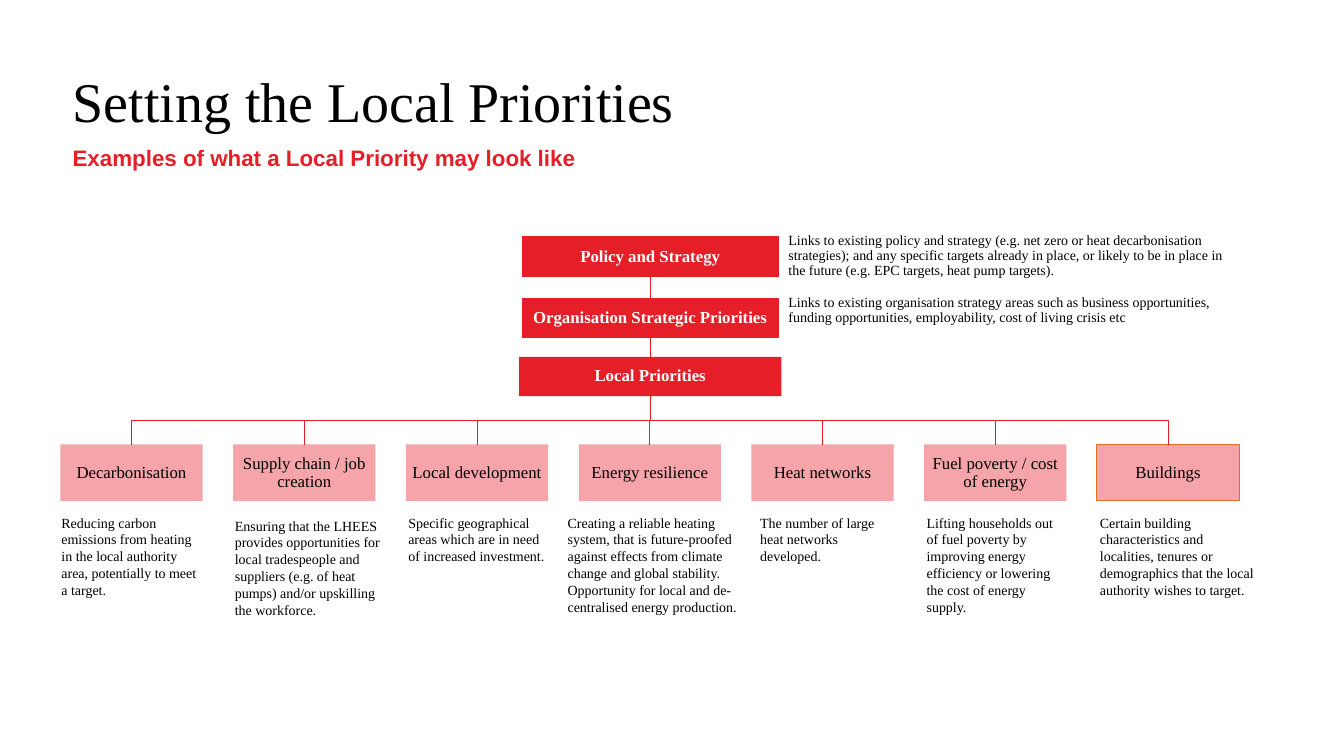
from pptx import Presentation
from pptx.dml.color import RGBColor
from pptx.enum.shapes import MSO_CONNECTOR as LINK, MSO_SHAPE
from pptx.enum.text import MSO_ANCHOR, PP_ALIGN
from pptx.oxml.ns import qn
from pptx.util import Inches, Pt
from lxml.etree import SubElement

COLOURS = {"red": "E61E28", "pink": "F5A5A9", "orange": "E66E23",
           "black": "000000", "white": "FFFFFF"}
SERIF, SANS = "Times New Roman", "Arial"

# Chart geometry, in inches
CENTRE = 6.45
LEVEL_HEIGHT = 0.39
TRUNK_END = 3.93
PRIORITY_LEFT, PRIORITY_TOP = 0.6, 4.41
PRIORITY_WIDTH, PRIORITY_HEIGHT = 1.41, 0.56
PRIORITY_PITCH = 10.28 / 6

# Level: label, top, width, outline
LEVELS = [
    ("Policy and Strategy", 2.35, 2.54, "red"),
    ("Organisation Strategic Priorities", 2.96, 2.54, "red"),
    ("Local Priorities", 3.54, 2.6, None),
]

# Note beside a level: top, text
LEVEL_NOTES = [
    (2.12, "Links to existing policy and strategy (e.g. net zero or heat "
           "decarbonisation strategies); and any specific targets already in place, "
           "or likely to be in place in the future (e.g. EPC targets, heat pump targets)."),
    (2.78, "Links to existing organisation strategy areas such as business "
           "opportunities, funding opportunities, employability, cost of living crisis etc"),
]

# Priority: label, outline, note left, note top, note width, note
PRIORITIES = [
    ("Decarbonisation", None, 0.41, 4.9, 1.76,
     "Reducing carbon emissions from heating in the local authority area, "
     "potentially to meet a target."),
    ("Supply chain / job creation", None, 2.13, 4.93, 1.93,
     "Ensuring that the LHEES provides opportunities for local tradespeople and "
     "suppliers (e.g. of heat pumps) and/or upskilling the workforce."),
    ("Local development", None, 3.85, 4.9, 1.78,
     "Specific geographical areas which are in need of increased investment."),
    ("Energy resilience", None, 5.43, 4.9, 2.19,
     "Creating a reliable heating system, that is future-proofed against effects "
     "from climate change and global stability. Opportunity for local and "
     "de-centralised energy production."),
    ("Heat networks", None, 7.34, 4.9, 1.78,
     "The number of large heat networks developed."),
    ("Fuel poverty / cost of energy", None, 8.99, 4.9, 1.78,
     "Lifting households out of fuel poverty by improving energy efficiency or "
     "lowering the cost of energy supply."),
    ("Buildings", "orange", 10.71, 4.9, 1.97,
     "Certain building characteristics and localities, tenures or demographics "
     "that the local authority wishes to target."),
]


def colour(name):
    return RGBColor.from_string(COLOURS[name])


def write(shape, text, inset, ink="black", font=None, paragraph=None, anchor=MSO_ANCHOR.TOP):
    frame = shape.text_frame
    margins = {f"margin_{side}": Inches(inset) for side in ("left", "top", "right", "bottom")}
    line = frame.paragraphs[0]
    line.text = text
    for target, values in (
        (frame, {"word_wrap": True, "vertical_anchor": anchor, **margins}),
        (line, paragraph or {}),
        (line.font, {"name": SERIF, **(font or {})}),
    ):
        for attribute, value in values.items():
            setattr(target, attribute, value)
    line.font.color.rgb = colour(ink)


def add_text(slide, bounds, text, inset=0, **style):
    write(slide.shapes.add_textbox(*map(Inches, bounds)), text, inset, **style)


def add_note(slide, bounds, text, **paragraph):
    add_text(slide, bounds, text, 0.2, font={"size": Pt(10)}, paragraph=paragraph)


def add_box(slide, bounds, text, fill, outline, ink, bold=False):
    box = slide.shapes.add_shape(MSO_SHAPE.RECTANGLE, *map(Inches, bounds))
    box.shadow.inherit = False
    box.fill.solid()
    box.fill.fore_color.rgb = colour(fill)
    if outline:
        box.line.color.rgb = colour(outline)
        box.line.width = Pt(0.75)
    else:
        box.line.fill.background()
    write(box, text, 0.05, ink, {"size": Pt(12), "bold": bold},
          {"alignment": PP_ALIGN.CENTER, "line_spacing": 0.9}, MSO_ANCHOR.MIDDLE)


def add_link(slide, kind, *ends):
    link = slide.shapes.add_connector(kind, *map(Inches, ends))
    link.line.color.rgb = colour("red")
    link.line.width = Pt(0.5)
    SubElement(link._element.spPr, qn("a:effectLst"))
    return link


def add_branch(slide, target):
    """Elbow running down, across and down: a quarter-turned connector."""
    rightward = target >= CENTRE
    middle_x, middle_y = (CENTRE + target) / 2, (TRUNK_END + PRIORITY_TOP) / 2
    half_drop = (PRIORITY_TOP - TRUNK_END) / 2 * (1 if rightward else -1)
    half_span = abs(target - CENTRE) / 2
    branch = add_link(slide, LINK.ELBOW, middle_x + half_drop, middle_y - half_span,
                      middle_x - half_drop, middle_y + half_span)
    quarter_turns = 3 if rightward else 1
    branch._element.spPr.find(qn("a:xfrm")).set("rot", str(quarter_turns * 90 * 60000))


def main():
    deck = Presentation()
    deck.slide_width, deck.slide_height = Inches(13.33), Inches(7.5)
    slide = deck.slides.add_slide(deck.slide_layouts[6])

    # Heading
    add_text(slide, (0.72, 0.72, 9.87, 0.58), "Setting the Local Priorities",
             font={"size": Pt(40)}, paragraph={"line_spacing": Pt(44)})
    add_text(slide, (0.72, 1.43, 5.82, 0.27),
             "Examples of what a Local Priority may look like", ink="red",
             font={"name": SANS, "size": Pt(16), "bold": True})

    # Levels, their notes and the trunk between them
    for label, top, width, outline in LEVELS:
        add_box(slide, (CENTRE - width / 2, top, width, LEVEL_HEIGHT),
                label, "red", outline, "white", bold=True)
    for top, note in LEVEL_NOTES:
        add_note(slide, (7.62, top, 4.8, 0.68), note, line_spacing=0.89)
    for upper, lower in zip(LEVELS, LEVELS[1:]):
        add_link(slide, LINK.STRAIGHT, CENTRE, upper[1] + LEVEL_HEIGHT, CENTRE, lower[1])

    # Priorities, their notes and branches
    for index, (label, outline, note_left, note_top, note_width, note) in enumerate(PRIORITIES):
        left = PRIORITY_LEFT + index * PRIORITY_PITCH
        add_box(slide, (left, PRIORITY_TOP, PRIORITY_WIDTH, PRIORITY_HEIGHT),
                label, "pink", outline, "black")
        add_note(slide, (note_left, note_top, note_width, 1.34), note)
        add_branch(slide, left + PRIORITY_WIDTH / 2)

    deck.save("out.pptx")


if __name__ == "__main__":
    main()
